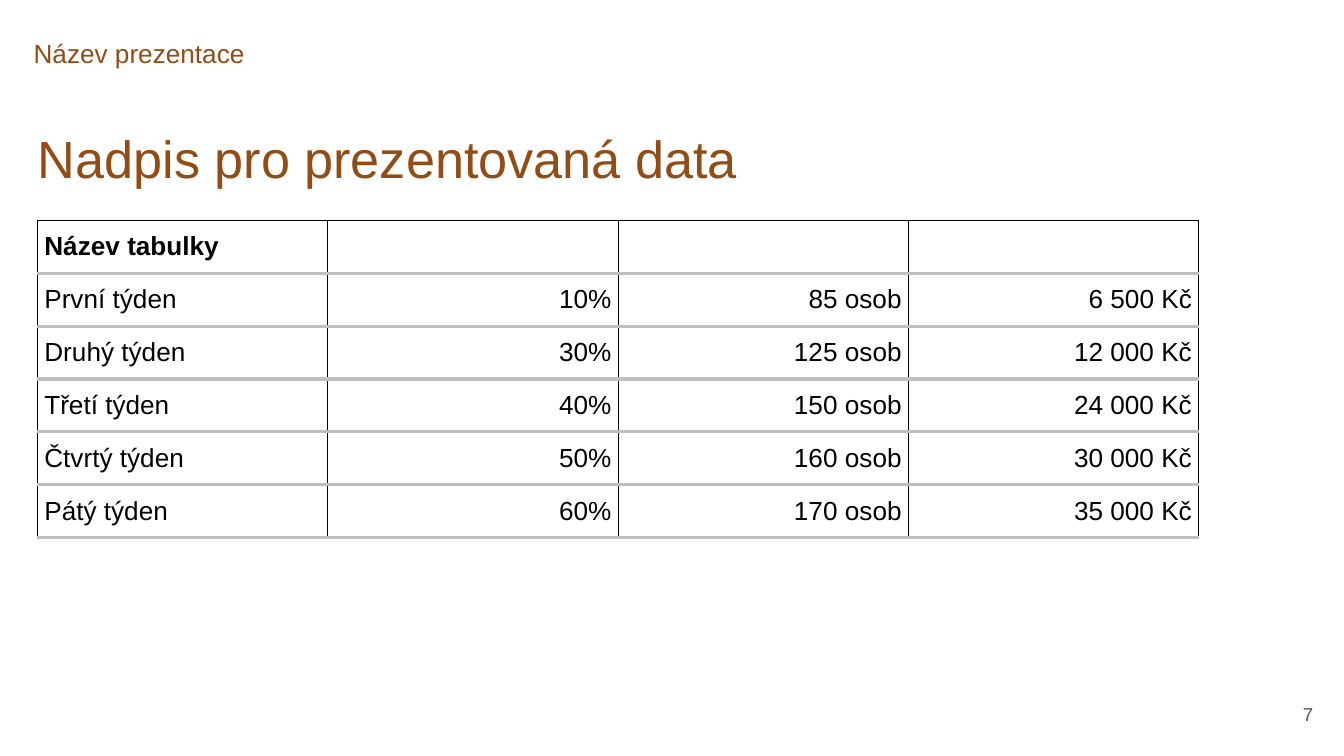
from lxml import etree
from pptx import Presentation
from pptx.dml.color import RGBColor
from pptx.enum.text import MSO_ANCHOR, PP_ALIGN
from pptx.oxml.ns import qn
from pptx.util import Inches, Pt

LEFT, RIGHT = PP_ALIGN.LEFT, PP_ALIGN.RIGHT
TOP, MIDDLE = MSO_ANCHOR.TOP, MSO_ANCHOR.MIDDLE
BROWN, GRAY, BLACK, WHITE, RULE = "924C14", "585858", "000000", "FFFFFF", "BCBEC0"

ROWS = [
    ("Název tabulky", "", "", ""),
    ("První týden", "10%", "85 osob", "6 500 Kč"),
    ("Druhý týden", "30%", "125 osob", "12 000 Kč"),
    ("Třetí týden", "40%", "150 osob", "24 000 Kč"),
    ("Čtvrtý týden", "50%", "160 osob", "30 000 Kč"),
    ("Pátý týden", "60%", "170 osob", "35 000 Kč"),
]


def style_text(paragraph, size, color, align=LEFT, bold=False):
    paragraph.alignment = align
    for run in paragraph.runs:
        run.font.name = "Arial"
        run.font.size = Pt(size)
        run.font.bold = bold
        run.font.color.rgb = RGBColor.from_string(color)


def add_border(cell, side, color, width):
    """Draw one cell edge; side is lnL, lnR, lnT or lnB, width in points."""
    line = etree.SubElement(cell._tc.get_or_add_tcPr(), qn(f"a:{side}"), w=str(Pt(width)))
    fill = etree.SubElement(line, qn("a:solidFill"))
    etree.SubElement(fill, qn("a:srgbClr"), val=color)


prs = Presentation()
prs.slide_width = Inches(10)
prs.slide_height = prs.slide_width * 9 // 16
slide = prs.slides.add_slide(prs.slide_layouts[6])

# Presentation name, heading and page number
labels = [
    # text, position and size, left inset, vertical inset, points, color, align, anchor, wrap
    ("Název prezentace", (0.13, 0.28, 8.27, 0.39), 0.12, 0, 14, BROWN, LEFT, TOP, True),
    ("Nadpis pro prezentovaná data", (0.28, 0.84, 8.27, 0.63), 0, 0.1, 28, BROWN, LEFT, TOP, True),
    ("7", (9.5, 5.14, 0.37, 0.35), 0.1, 0.1, 10, GRAY, RIGHT, MIDDLE, False),
]
for text, bounds, inset_left, inset_y, size, color, align, anchor, wrap in labels:
    frame = slide.shapes.add_textbox(*map(Inches, bounds)).text_frame
    frame.word_wrap = wrap
    frame.vertical_anchor = anchor
    frame.margin_left, frame.margin_right = Inches(inset_left), Inches(0.1)
    frame.margin_top = frame.margin_bottom = Inches(inset_y)
    frame.text = text
    style_text(frame.paragraphs[0], size, color, align)

# Weekly data
weekly = slide.shapes.add_table(
    len(ROWS), len(ROWS[0]), Inches(0.28), Inches(1.64), Inches(8.64), Inches(2.36)
).table
weekly.horz_banding = False
for r, values in enumerate(ROWS):
    header = r == 0
    for c, value in enumerate(values):
        cell = weekly.cell(r, c)
        cell.margin_left = cell.margin_right = Inches(0.05)
        cell.margin_top = cell.margin_bottom = Inches(0.05)
        cell.vertical_anchor = MIDDLE
        add_border(cell, "lnL", BLACK, 0.5)
        add_border(cell, "lnR", BLACK, 0.5)
        add_border(cell, "lnT", *((BLACK, 0.5) if header else (RULE, 2)))
        add_border(cell, "lnB", RULE, 2)
        if header:
            cell.fill.background()
        else:
            cell.fill.solid()
            cell.fill.fore_color.rgb = RGBColor.from_string(WHITE)
        cell.text = value
        paragraph = cell.text_frame.paragraphs[0]
        style_text(paragraph, 14, BLACK, RIGHT if c else LEFT, header)
        if not value:  # keeps an empty cell from stretching its row
            etree.SubElement(paragraph._p, qn("a:endParaRPr"), sz="1400")

prs.save("out.pptx")
